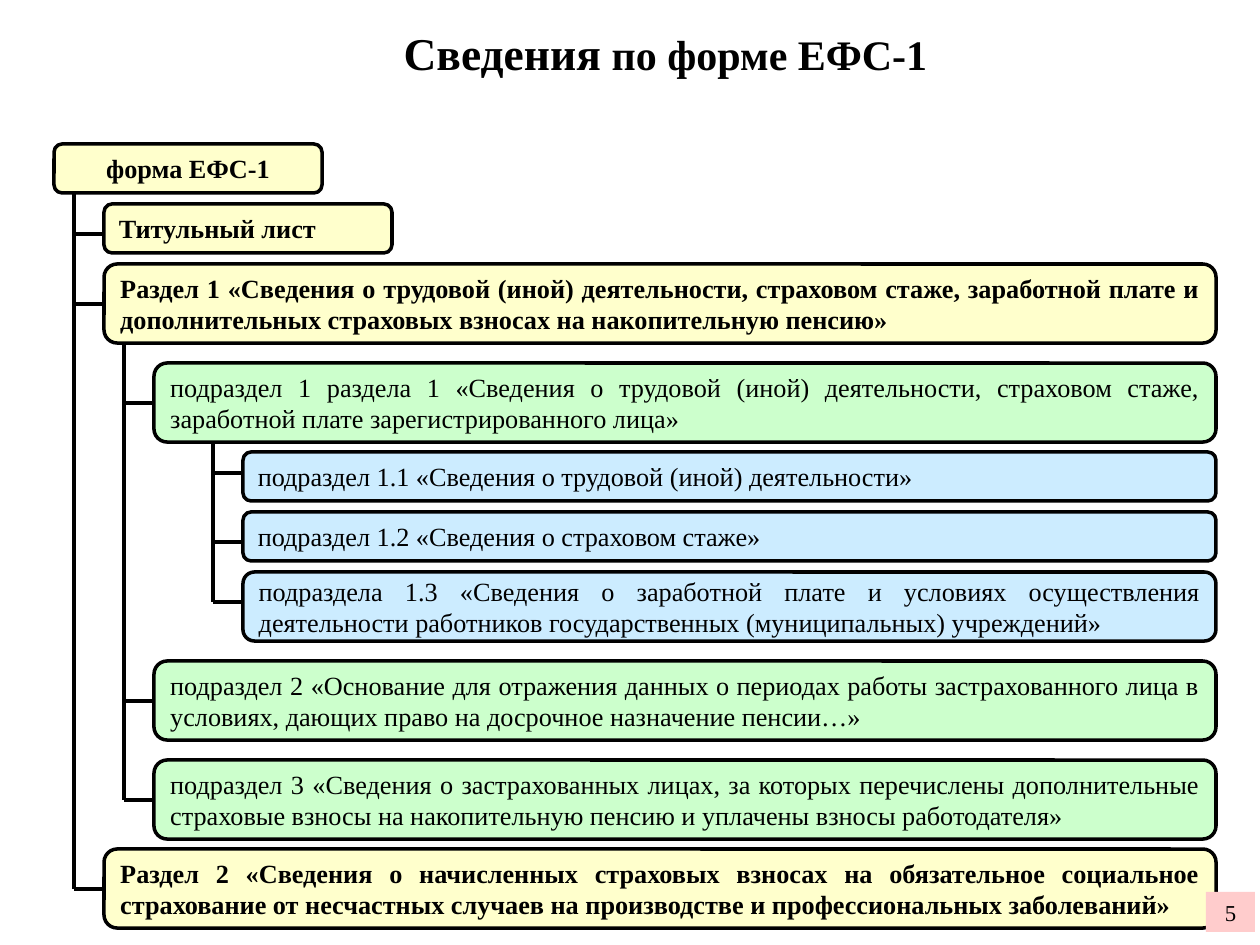
from pptx import Presentation
from pptx.dml.color import RGBColor
from pptx.enum.shapes import MSO_CONNECTOR, MSO_SHAPE
from pptx.enum.text import MSO_ANCHOR, PP_ALIGN
from pptx.oxml.ns import qn
from pptx.util import Pt
from lxml import etree

PX = 914400 / 126
FONT = "Times New Roman"
BLACK, YELLOW, GREEN, BLUE, PINK = "000000", "FFFFCC", "CCFFCC", "CCECFF", "FFCCCC"
RIGHT = 1216   # shared right edge of the wide boxes
BRANCH = 30    # length of the line leading into a box

TITLE = [("Сведения", 26), (" по форме ЕФС-1", 24)]
PAGE_NUMBER = "5"

# Nesting level: left edge, fill
LEVELS = [(54, YELLOW), (104, YELLOW), (154, GREEN), (243, BLUE)]

# Level, top, height, y of the incoming branch, text, extra format
SECTIONS = [
    (0, 144, 49, None, "форма ЕФС-1", dict(width=268, bold=True, align=PP_ALIGN.CENTER)),
    (1, 204, 49, 234, "Титульный лист", dict(width=288, bold=True, align=PP_ALIGN.LEFT)),
    (1, 264, 79, 304, "Раздел 1 «Сведения о трудовой (иной) деятельности, страховом стаже, "
     "заработной плате и дополнительных страховых взносах на накопительную пенсию»", dict(bold=True)),
    (2, 363, 79, 403, "подраздел 1 раздела 1 «Сведения о трудовой (иной) деятельности, "
     "страховом стаже, заработной плате зарегистрированного лица»", {}),
    (3, 452, 49, 473, "подраздел 1.1 «Сведения о трудовой (иной) деятельности»", {}),
    (3, 512, 49, 542, "подраздел 1.2 «Сведения о страховом стаже»", {}),
    (3, 572, 69, 602, "подраздела 1.3 «Сведения о заработной плате и условиях осуществления "
     "деятельности работников государственных (муниципальных) учреждений»", {}),
    (2, 661, 79, 701, "подраздел 2 «Основание для отражения данных о периодах работы "
     "застрахованного лица в условиях, дающих право на досрочное назначение пенсии…»", {}),
    (2, 760, 79, 800, "подраздел 3 «Сведения о застрахованных лицах, за которых перечислены "
     "дополнительные страховые взносы на накопительную пенсию и уплачены взносы работодателя»", {}),
    (1, 849, 79, 889, "Раздел 2 «Сведения о начисленных страховых взносах на обязательное "
     "социальное страхование от несчастных случаев на производстве и профессиональных "
     "заболеваний»", dict(bold=True)),
]


def px(*values):
    return [round(value * PX) for value in values]


def color(value):
    return RGBColor.from_string(value)


def write(shape, spans, bold=False, align=PP_ALIGN.CENTER, spacing=None):
    frame = shape.text_frame
    frame.word_wrap = True
    frame.vertical_anchor = MSO_ANCHOR.MIDDLE
    para = frame.paragraphs[0]
    para.alignment = align
    para.line_spacing = spacing
    for text, size in spans:
        span = para.add_run()
        span.text = text
        span.font.name = FONT
        span.font.size = Pt(size)
        span.font.bold = bold
        span.font.color.rgb = color(BLACK)


def add_box(page, kind, bounds, fill, outlined=True):
    box = page.shapes.add_shape(kind, *px(*bounds))
    box.shadow.inherit = False
    box.fill.solid()
    box.fill.fore_color.rgb = color(fill)
    if outlined:
        box.line.color.rgb = color(BLACK)
        box.line.width = Pt(2)
    else:
        box.line.fill.background()
    return box


def add_line(page, *ends):
    line = page.shapes.add_connector(MSO_CONNECTOR.STRAIGHT, *px(*ends))
    line.line.color.rgb = color(BLACK)
    line.line.width = Pt(2)
    etree.SubElement(line._element.spPr, qn("a:effectLst"))


def add_section(page, level, top, height, text, width=None, bold=False, align=PP_ALIGN.JUSTIFY):
    left, fill = LEVELS[level]
    bounds = (left, top, width or RIGHT - left, height)
    box = add_box(page, MSO_SHAPE.ROUNDED_RECTANGLE, bounds, fill)
    write(box, [(text, 15)], bold=bold, align=align)


def add_tree_lines(page):
    for index, (level, top, height, *_) in enumerate(SECTIONS):
        # Direct children: one level deeper, up to the next box of this level or above
        branches = []
        for child_level, _, _, branch, *_ in SECTIONS[index + 1:]:
            if child_level <= level:
                break
            if child_level == level + 1:
                branches.append(branch)
        if branches:
            child_left = LEVELS[level + 1][0]
            trunk = child_left - BRANCH
            add_line(page, trunk, top + height, trunk, branches[-1])
            for y in branches:
                add_line(page, trunk, y, child_left, y)


def main():
    deck = Presentation()
    deck.slide_width, deck.slide_height = px(1260, 945)
    page = deck.slides.add_slide(deck.slide_layouts[6])

    # Title
    title = page.shapes.add_textbox(*px(134, 6, 1063, 100))
    write(title, TITLE, bold=True, spacing=0.9)

    # Form structure
    for level, top, height, _, text, style in SECTIONS:
        add_section(page, level, top, height, text, **style)
    add_tree_lines(page)

    # Page number
    number = add_box(page, MSO_SHAPE.RECTANGLE, (1206, 892, 49, 40), PINK, outlined=False)
    write(number, [(PAGE_NUMBER, 13)])

    deck.save("out.pptx")


if __name__ == "__main__":
    main()
